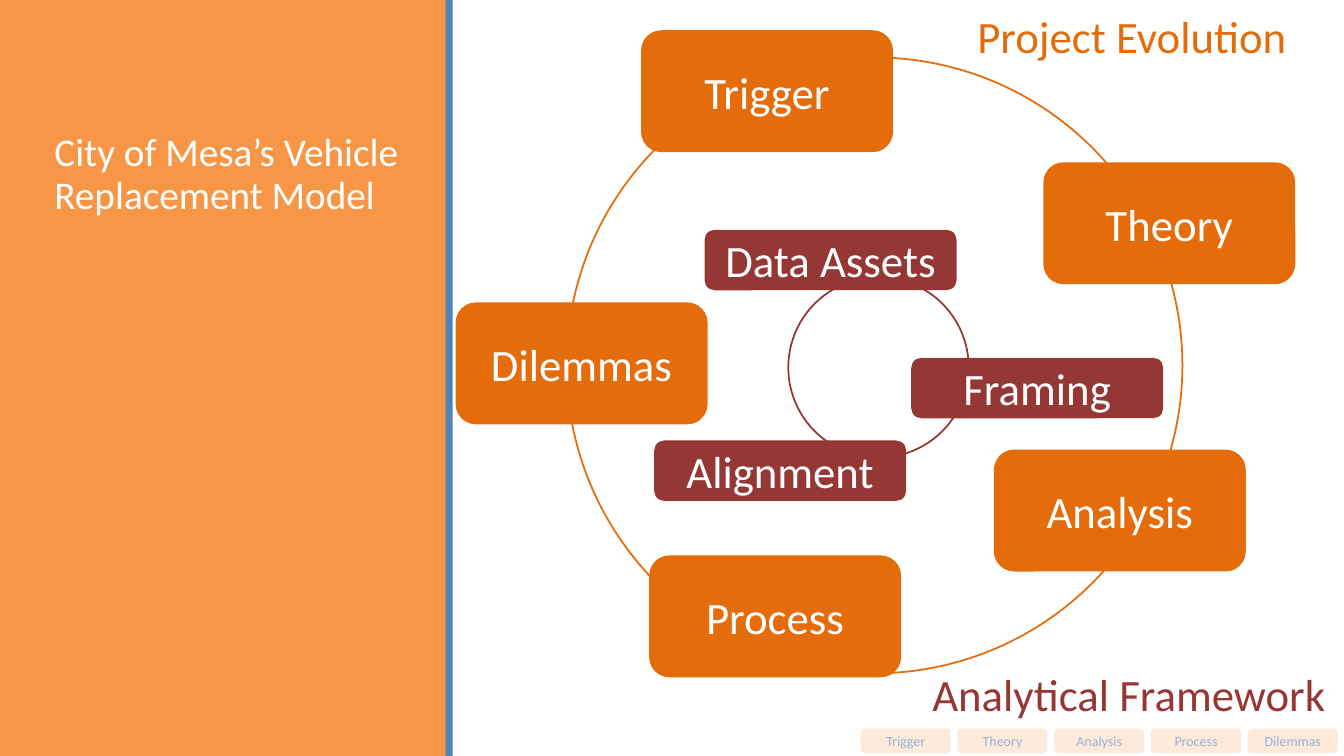
from dataclasses import dataclass

import pptx
import pptx.dml.color
import pptx.enum.shapes
import pptx.enum.text
import pptx.util

SHAPES = pptx.enum.shapes.MSO_SHAPE
ALIGN = pptx.enum.text.PP_ALIGN
CELL = pptx.util.Inches(0.1)  # side of one square grid cell
COLUMNS, ROWS = 133.33, 75

COLORS = {
    "panel": "F79646",
    "divider": "4F81BD",
    "evolution": "E46C0A",
    "framework": "953735",
    "tab": "FDEADA",
    "tab_text": "95B3D7",
    "white": "FFFFFF",
}


@dataclass(frozen=True)
class Area:
    """Left, top, width and height in grid columns and rows."""
    column: float
    row: float
    columns: float
    rows: float

    def lengths(self) -> list[int]:
        return [round(n * CELL) for n in (self.column, self.row, self.columns, self.rows)]


@dataclass(frozen=True)
class Label:
    words: str
    area: Area
    color: str = "white"
    fill: str | None = None
    size: int = 32
    align: ALIGN = ALIGN.CENTER


def rgb(name: str) -> pptx.dml.color.RGBColor:
    return pptx.dml.color.RGBColor.from_string(COLORS[name])


def apply_format(target, values: dict) -> None:
    for attribute, value in values.items():
        setattr(target, attribute, value)


def add_plain(slide, kind: SHAPES, area: Area, fill: str | None = None,
              outline: str | None = None):
    shape = slide.shapes.add_shape(kind, *area.lengths())
    shape.shadow.inherit = False
    if fill:
        shape.fill.solid()
        shape.fill.fore_color.rgb = rgb(fill)
    else:
        shape.fill.background()
    if outline:
        shape.line.color.rgb = rgb(outline)
        shape.line.width = pptx.util.Pt(1.25)
    else:
        shape.line.fill.background()
    return shape


def write(frame, words: str, size: int, color: str, frame_format: dict,
          paragraph_format: dict) -> None:
    apply_format(frame, {"word_wrap": True, **frame_format})
    paragraph = frame.paragraphs[0]
    apply_format(paragraph, paragraph_format)
    run = paragraph.add_run()
    run.text = words
    apply_format(run.font, {"name": "Calibri", "size": pptx.util.Pt(size)})
    run.font.color.rgb = rgb(color)


def add_label(slide, label: Label) -> None:
    box = add_plain(slide, SHAPES.ROUNDED_RECTANGLE, label.area, label.fill)
    side, edge = pptx.util.Inches(0.09), pptx.util.Inches(0.04)
    write(box.text_frame, label.words, label.size, label.color,
          {"vertical_anchor": pptx.enum.text.MSO_ANCHOR.MIDDLE,
           "margin_left": side, "margin_right": side,
           "margin_top": edge, "margin_bottom": edge},
          {"alignment": label.align})


def add_title_panel(slide) -> None:
    add_plain(slide, SHAPES.RECTANGLE, Area(0, 0, 44.3, ROWS), "panel")
    add_plain(slide, SHAPES.RECTANGLE, Area(44.2, 0, 0.7, ROWS), "divider")
    title = slide.shapes.add_textbox(*Area(5.4, 12.7, 36.9, 45.1).lengths())
    write(title.text_frame, "City of Mesa’s Vehicle Replacement Model", 28, "white",
          {"margin_left": 0, "margin_right": 0},
          {"line_spacing": 0.9, "space_before": pptx.util.Pt(12),
           "space_after": pptx.util.Pt(2)})


STAGES = {
    "Trigger": (63.6, 3),
    "Theory": (103.5, 16.1),
    "Analysis": (98.6, 44.6),
    "Process": (64.4, 55.1),
    "Dilemmas": (45.2, 30),
}
FRAMEWORK_PARTS = {
    "Data Assets": (69.9, 22.8),
    "Framing": (90.4, 35.5),
    "Alignment": (64.9, 43.7),
}
HEADINGS = [
    Label("Project Evolution", Area(91.2, 0.7, 42.2, 5.7), "evolution"),
    Label("Analytical Framework", Area(82.3, 66, 50.4, 5.7), "framework",
          align=ALIGN.RIGHT),
]


def main() -> None:
    deck = pptx.Presentation()
    apply_format(deck, {"slide_width": round(COLUMNS * CELL), "slide_height": ROWS * CELL})
    slide = deck.slides.add_slide(deck.slide_layouts[6])

    add_title_panel(slide)
    for index, stage in enumerate(STAGES):
        add_label(slide, Label(stage, Area(85.4 + 9.6 * index, 72.3, 8.9, 2.4),
                               "tab_text", "tab", 10))

    add_plain(slide, SHAPES.OVAL, Area(78.2, 27.5, 17.9, 17.9), outline="framework")
    add_plain(slide, SHAPES.OVAL, Area(56.2, 5.7, 61.1, 61.1), outline="evolution")
    for places, rows, fill in ((FRAMEWORK_PARTS, 6, "framework"),
                               (STAGES, 12.1, "evolution")):
        for words, (column, row) in places.items():
            add_label(slide, Label(words, Area(column, row, 25, rows), fill=fill))
    for heading in HEADINGS:
        add_label(slide, heading)

    deck.save("out.pptx")


if __name__ == "__main__":
    main()
